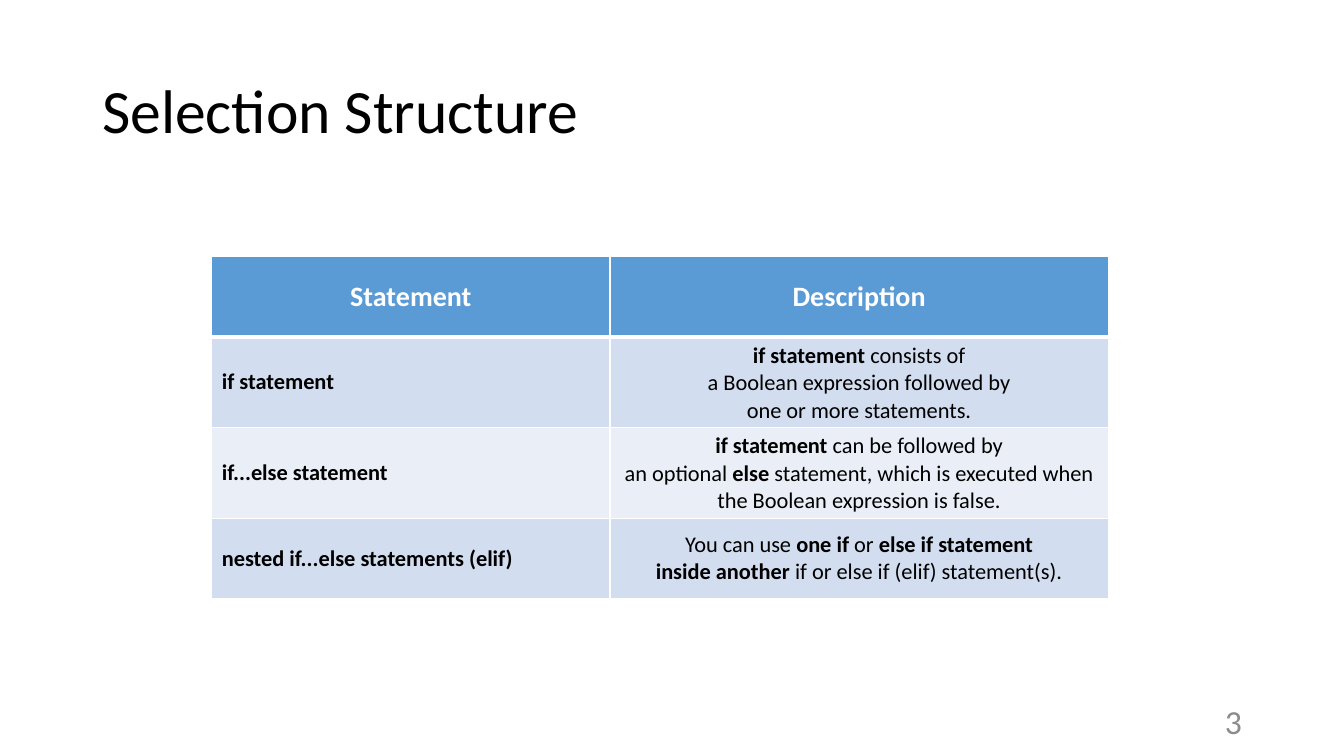
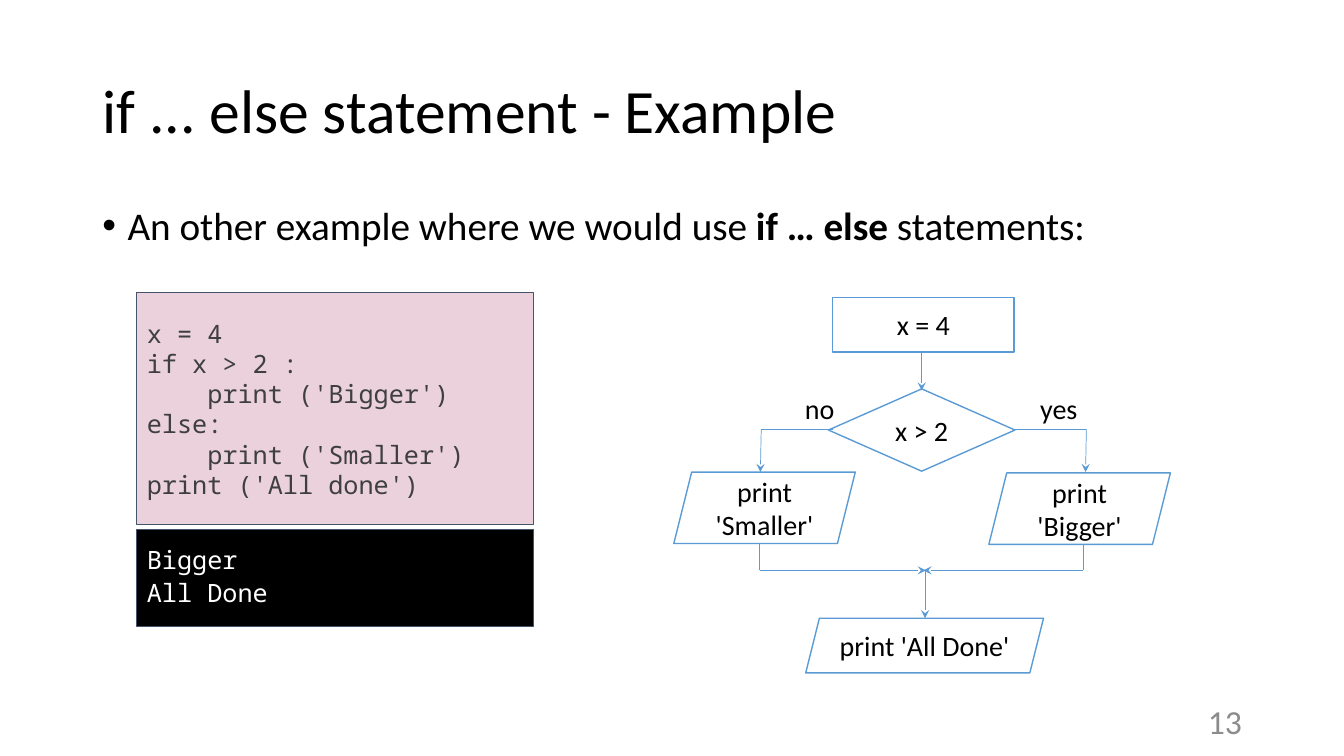
from dataclasses import dataclass

from lxml import etree
from pptx import Presentation
from pptx.dml.color import RGBColor
from pptx.enum.shapes import MSO_CONNECTOR, MSO_SHAPE
from pptx.enum.text import MSO_ANCHOR, PP_ALIGN
from pptx.oxml.ns import qn
from pptx.util import Inches, Pt

LEFT, CENTER, RIGHT = PP_ALIGN.LEFT, PP_ALIGN.CENTER, PP_ALIGN.RIGHT
TOP, MIDDLE = MSO_ANCHOR.TOP, MSO_ANCHOR.MIDDLE
RECTANGLE, DIAMOND = MSO_SHAPE.RECTANGLE, MSO_SHAPE.DIAMOND
PARALLELOGRAM = MSO_SHAPE.PARALLELOGRAM
STRAIGHT = MSO_CONNECTOR.STRAIGHT


@dataclass(frozen=True)
class Theme:
    font: str = "Calibri"
    mono: str = "Noto Sans Mono"
    black: str = "000000"
    white: str = "FFFFFF"
    gray: str = "8C8C8C"
    blue: str = "5B9BD5"
    bands: tuple = ("D2DEEF", "EAEFF7")
    pink: str = "EAD1DC"
    code_text: str = "3F3F3F"
    slate: str = "44546A"
    title_size: int = 44
    body_size: int = 28
    number_size: int = 24
    label_size: int = 20
    code_size: int = 18
    cell_size: int = 16


theme = Theme()
color = RGBColor.from_string

presentation = Presentation()
presentation.slide_width, presentation.slide_height = Inches(13.33), Inches(7.5)
blank = presentation.slide_layouts[6]

# The slide is a grid of 160 columns by 90 rows of square units.
UNIT = presentation.slide_height / 90


def grid(*lengths):
    return [round(length * UNIT) for length in lengths]


def write(frame, lines, size, ink=theme.black, font=theme.font, align=LEFT,
          anchor=MIDDLE, spacing=1, around=0, margin=None):
    """Write one paragraph per line; text between asterisks is bold."""
    frame.word_wrap = True
    frame.vertical_anchor = anchor
    if margin is not None:
        frame.margin_left = frame.margin_right = Inches(margin)
        frame.margin_top = frame.margin_bottom = Inches(margin)
    for index, line in enumerate(lines):
        paragraph = frame.add_paragraph() if index else frame.paragraphs[0]
        paragraph.alignment = align
        paragraph.line_spacing = spacing
        paragraph.space_before = paragraph.space_after = Pt(around)
        paragraph.font.name, paragraph.font.size = font, Pt(size)
        paragraph.font.color.rgb = color(ink)
        for part, words in enumerate(line.split("*")):
            if words:
                run = paragraph.add_run()
                run.text = words
                run.font.bold = part % 2 == 1


# Shared title and slide number
slides = []
for title, number in (("Selection Structure", "3"),
                      ("if ... else statement - Example", "13")):
    slide = presentation.slides.add_slide(blank)
    slides.append(slide)
    title_box = slide.shapes.add_textbox(*grid(11, 4.8, 138, 17.4))
    write(title_box.text_frame, [title], theme.title_size, spacing=0.9)
    number_box = slide.shapes.add_textbox(*grid(113, 83.4, 36, 4.8))
    write(number_box.text_frame, [number], theme.number_size, theme.gray, align=RIGHT)
table_slide, example_slide = slides

# Table of statements
statements = [
    (["*Statement*"], ["*Description*"]),
    (["*if statement*"],
     ["*if statement *consists of", "a Boolean expression followed by",
      "one or more statements."]),
    (["*if...else statement*"],
     ["*if statement *can be followed by",
      "an optional *else* statement, which is executed when "
      "the Boolean expression is false."]),
    (["*nested if...else statements (elif)*"],
     ["You can use *one if* or *else if statement*",
      "*inside another *if or else if (elif) statement(s)."]),
]
column_widths = grid(47.4, 59.3)
table = table_slide.shapes.add_table(
    len(statements), 2, *grid(25.2, 30.5, 106.7, 38.4)).table
table.horz_banding = False
for column, width in zip(table.columns, column_widths):
    column.width = width
for row_index, row in enumerate(statements):
    header = row_index == 0
    for column_index, lines in enumerate(row):
        cell = table.cell(row_index, column_index)
        properties = cell._tc.get_or_add_tcPr()
        thickness = {"lnL": 1, "lnR": 1, "lnT": 3 if row_index == 1 else 1,
                     "lnB": 3 if header else 1}
        for side, points in thickness.items():
            border = etree.SubElement(properties, qn(f"a:{side}"), w=str(Pt(points)))
            border_fill = etree.SubElement(border, qn("a:solidFill"))
            etree.SubElement(border_fill, qn("a:srgbClr"), val=theme.white)
        cell.fill.solid()
        cell.fill.fore_color.rgb = color(
            theme.blue if header else theme.bands[(row_index - 1) % 2])
        cell.vertical_anchor = MIDDLE
        write(cell.text_frame, lines,
              theme.label_size if header else theme.cell_size,
              theme.white if header else theme.black,
              align=CENTER if header or column_index else LEFT)

# Bulleted introduction
shapes = example_slide.shapes
introduction = shapes.add_textbox(*grid(11, 24, 138, 57.1)).text_frame
write(introduction, ["An other example where we would use *if … else *statements:"],
      theme.body_size, anchor=TOP, spacing=0.9)
bullet = introduction.paragraphs[0]
bullet.space_before = Pt(10)
bullet_properties = bullet._p.get_or_add_pPr()
bullet_properties.set("marL", str(Inches(0.25)))
bullet_properties.set("indent", str(-Inches(0.25)))
bullet_font = etree.Element(qn("a:buFont"), typeface="Arial")
bullet_mark = etree.Element(qn("a:buChar"), char="•")
default_run = bullet_properties.find(qn("a:defRPr"))
default_run.addprevious(bullet_font)
default_run.addprevious(bullet_mark)

# Code, its output and the flowchart boxes
code = ["x = 4", "if x > 2 :", "    print ('Bigger')", "else:",
        "    print ('Smaller')", "print ('All done')"]
code_style = dict(size=theme.code_size, font=theme.mono, margin=0.1)
flow_style = dict(size=theme.label_size, align=CENTER, margin=0)
boxes = [
    (RECTANGLE, (16.3, 34.8, 47.2, 27.7), theme.pink, theme.slate, 0.75, code,
     dict(code_style, ink=theme.code_text)),
    (RECTANGLE, (16.3, 63, 47.2, 11.6), theme.black, theme.slate, 0.75,
     ["Bigger", "All Done"],
     dict(code_style, ink=theme.white, spacing=0.9, around=2)),
]
flow_boxes = [
    (RECTANGLE, (99.1, 35.4, 21.6, 6.5), "x = 4"),
    (DIAMOND, (98.6, 46.3, 22.2, 9.8), "x > 2"),
    (PARALLELOGRAM, (80.2, 56.2, 21.6, 8.5), "print 'Smaller'"),
    (PARALLELOGRAM, (117.7, 56.3, 21.6, 8.5), "print 'Bigger'"),
    (PARALLELOGRAM, (95.9, 73.6, 28.3, 6.5), "print 'All Done'"),
]
boxes += [(kind, place, theme.white, theme.blue, 1, [text], flow_style)
          for kind, place, text in flow_boxes]
for kind, place, fill, outline, weight, lines, style in boxes:
    shape = shapes.add_shape(kind, *grid(*place))
    shape.shadow.inherit = False
    shape.fill.solid()
    shape.fill.fore_color.rgb = color(fill)
    shape.line.color.rgb = color(outline)
    shape.line.width = Pt(weight)
    write(shape.text_frame, lines, **style)

# Branch labels
for label, left, width in (("no", 95.8, 3.6), ("yes", 123.8, 4.7)):
    label_box = shapes.add_textbox(*grid(left, 46.6, width, 4.1))
    write(label_box.text_frame, [label], theme.label_size, margin=0)
    label_box.text_frame.word_wrap = False

# Flow paths, each ending in an arrowhead
branch_row, join_row, box_bottom = 51.1, 67.9, 64.8
paths = [
    [(109.7, 41.9), (109.7, 46.5)],
    [(99.2, branch_row), (90.6, branch_row), (90.5, 56.2)],
    [(120.6, branch_row), (129.3, branch_row), (129.2, 56.2)],
    [(90.4, box_bottom), (90.4, join_row), (110.2, join_row)],
    [(128.9, box_bottom), (128.9, join_row), (109.9, join_row)],
    [(110.1, join_row), (110.1, 73.6)],
]
for points in paths:
    for start, end in zip(points, points[1:]):
        connector = shapes.add_connector(STRAIGHT, *grid(*start, *end))
        connector.line.color.rgb = color(theme.blue)
        connector.line.width = Pt(0.5)
        etree.SubElement(connector._element.spPr, qn("a:effectLst"))
    etree.SubElement(connector.line._get_or_add_ln(), qn("a:tailEnd"), type="stealth")

presentation.save("out.pptx")
